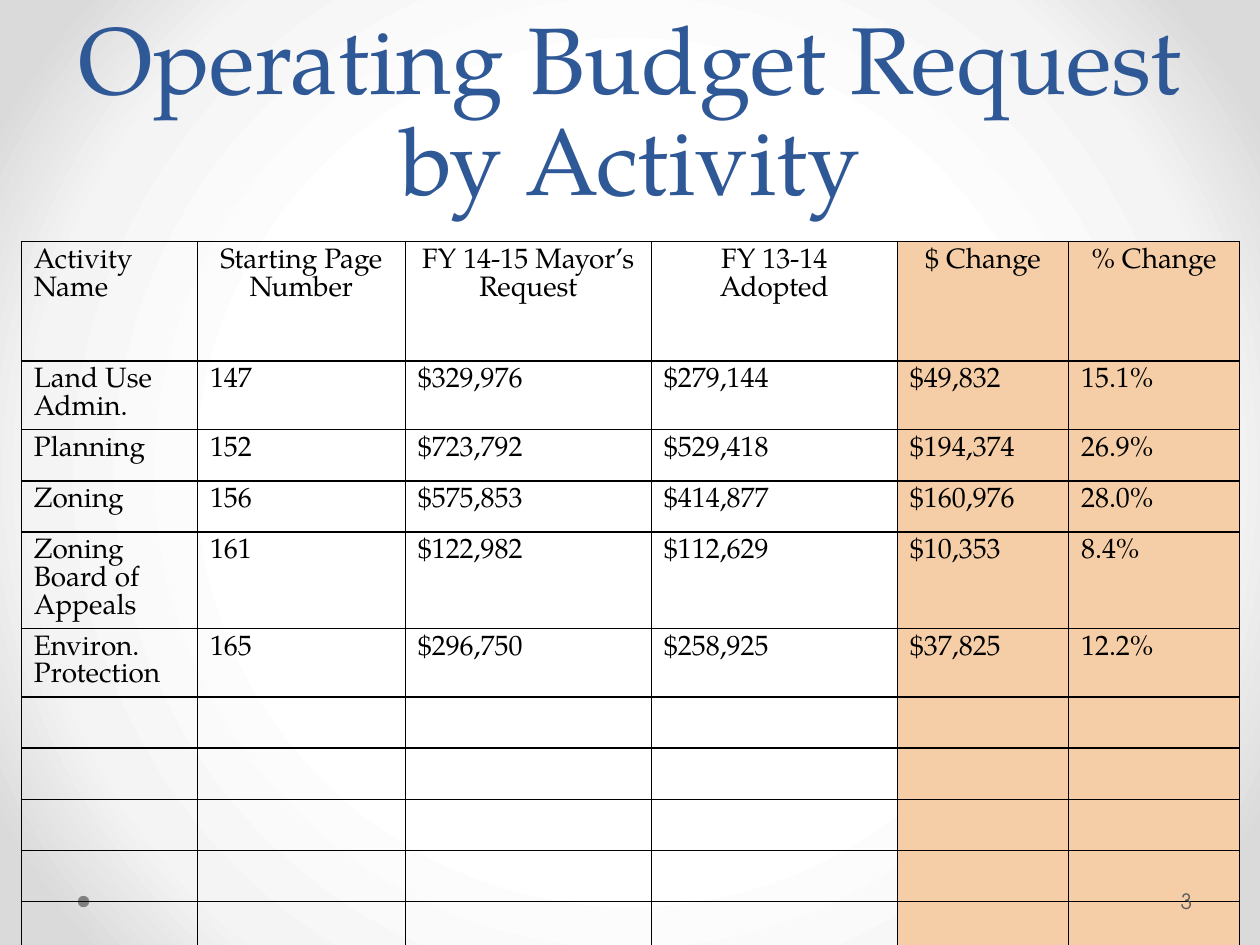
from lxml.etree import SubElement
from pptx import Presentation
from pptx.dml.color import RGBColor
from pptx.enum.shapes import MSO_SHAPE
from pptx.enum.text import MSO_ANCHOR, MSO_AUTO_SIZE, PP_ALIGN
from pptx.oxml import parse_xml
from pptx.oxml.ns import nsdecls, qn
from pptx.util import Cm, Pt

BLUE = RGBColor(0x2F, 0x58, 0x97)
BLACK = RGBColor(0, 0, 0)
PEACH = RGBColor(0xF5, 0xCE, 0xA7)
GREY = RGBColor(0x80, 0x80, 0x80)
DARK_GREY = RGBColor(0x59, 0x59, 0x59)
SERIF, SANS = "TeX Gyre Pagella", "TeX Gyre Adventor"

BACKGROUND_STOPS = [(50, "FFFFFF"), (76, "F4F4F4"), (92, "DADADA")]
COLUMN_WIDTHS = [3.55, 4.19, 4.96, 4.96, 3.45, 3.45]
HEADER_HEIGHT, ROW_HEIGHT = 2.41, 1.03
EMPTY_ROWS = 5
FIRST_CHANGE_COLUMN = 4
BUDGET = [
    ["Activity Name", "Starting Page Number", "FY 14-15 Mayor’s Request",
     "FY 13-14 Adopted", "$ Change", "% Change"],
    ["Land Use Admin.", "147", "$329,976", "$279,144", "$49,832", "15.1%"],
    ["Planning", "152", "$723,792", "$529,418", "$194,374", "26.9%"],
    ["Zoning", "156", "$575,853", "$414,877", "$160,976", "28.0%"],
    ["Zoning Board of Appeals", "161", "$122,982", "$112,629", "$10,353", "8.4%"],
    ["Environ. Protection", "165", "$296,750", "$258,925", "$37,825", "12.2%"],
]


def set_background(slide):
    stops = "".join(f'<a:gs pos="{pos * 1000}"><a:srgbClr val="{color}"/></a:gs>'
                    for pos, color in BACKGROUND_STOPS)
    bg = parse_xml(
        f'<p:bg {nsdecls("p", "a")}><p:bgPr><a:gradFill rotWithShape="1">'
        f'<a:gsLst>{stops}</a:gsLst><a:path path="circle">'
        '<a:fillToRect l="50000" t="50000" r="50000" b="50000"/></a:path>'
        '</a:gradFill><a:effectLst/></p:bgPr></p:bg>')
    slide.element.cSld.insert(0, bg)


def format_paragraph(p, font, size, color, align=PP_ALIGN.LEFT, spacing=None):
    p.alignment = align
    p.line_spacing = spacing
    for r in p.runs:
        r.font.name, r.font.size = font, Pt(size)
        r.font.color.rgb = color


def place(sp, left, top, width, height):
    sp.left, sp.top, sp.width, sp.height = map(Cm, (left, top, width, height))


def add_title(slide, text):
    sp = slide.shapes.title
    place(sp, 1.27, 0, 22.86, 4.45)
    tf = sp.text_frame
    tf.text = text
    tf.word_wrap = True
    tf.auto_size = MSO_AUTO_SIZE.NONE
    tf.vertical_anchor = MSO_ANCHOR.BOTTOM
    format_paragraph(tf.paragraphs[0], SERIF, 54, BLUE, PP_ALIGN.CENTER, Pt(58))


def add_footer_dot(slide):
    sp = slide.shapes.add_shape(MSO_SHAPE.OVAL, Cm(1.57), Cm(18.06), Cm(0.23), Cm(0.23))
    sp.shadow.inherit = False
    sp.fill.solid()
    sp.fill.fore_color.rgb = GREY
    sp.line.fill.background()


def set_borders(cell):
    tc_pr = cell._tc.get_or_add_tcPr()
    for side in ("a:lnL", "a:lnR", "a:lnT", "a:lnB"):
        ln = SubElement(tc_pr, qn(side), w=str(Pt(1)))
        fill = SubElement(ln, qn("a:solidFill"))
        SubElement(fill, qn("a:srgbClr"), val=str(BLACK))


def format_cell(cell, text, centered, highlighted):
    set_borders(cell)
    if highlighted:
        cell.fill.solid()
        cell.fill.fore_color.rgb = PEACH
    else:
        cell.fill.background()
    p = cell.text_frame.paragraphs[0]
    p.text = text
    align = PP_ALIGN.CENTER if centered else PP_ALIGN.LEFT
    format_paragraph(p, SERIF, 16, BLACK, align, Pt(16))


def add_budget_table(slide):
    rows = BUDGET + [[""] * len(COLUMN_WIDTHS)] * EMPTY_ROWS
    height = HEADER_HEIGHT + ROW_HEIGHT * (len(rows) - 1)
    table = slide.shapes.add_table(
        len(rows), len(COLUMN_WIDTHS), Cm(0.43), Cm(4.87),
        Cm(sum(COLUMN_WIDTHS)), Cm(height)).table
    table.first_row = table.horz_banding = False
    for column, width in zip(table.columns, COLUMN_WIDTHS):
        column.width = Cm(width)
    for i, values in enumerate(rows):
        table.rows[i].height = Cm(ROW_HEIGHT if i else HEADER_HEIGHT)
        for j, text in enumerate(values):
            format_cell(table.cell(i, j), text, i == 0 and j > 0,
                        j >= FIRST_CHANGE_COLUMN)


def add_page_number(slide, text):
    tf = slide.shapes.add_textbox(Cm(23.72), Cm(17.65), Cm(1.55), Cm(1.02)).text_frame
    tf.text = text
    tf.word_wrap = True
    tf.vertical_anchor = MSO_ANCHOR.MIDDLE
    tf.margin_left = Cm(0.08)
    tf.margin_right = Cm(0.13)
    format_paragraph(tf.paragraphs[0], SANS, 12, DARK_GREY)


def main():
    prs = Presentation()
    prs.slide_width, prs.slide_height = Cm(25.4), Cm(19.05)
    slide = prs.slides.add_slide(prs.slide_layouts[5])
    set_background(slide)
    # Title and footer dot sit behind the table, the page number in front
    add_footer_dot(slide)
    add_title(slide, "Operating Budget Request by Activity")
    add_budget_table(slide)
    add_page_number(slide, "3")
    prs.save("out.pptx")


if __name__ == "__main__":
    main()
